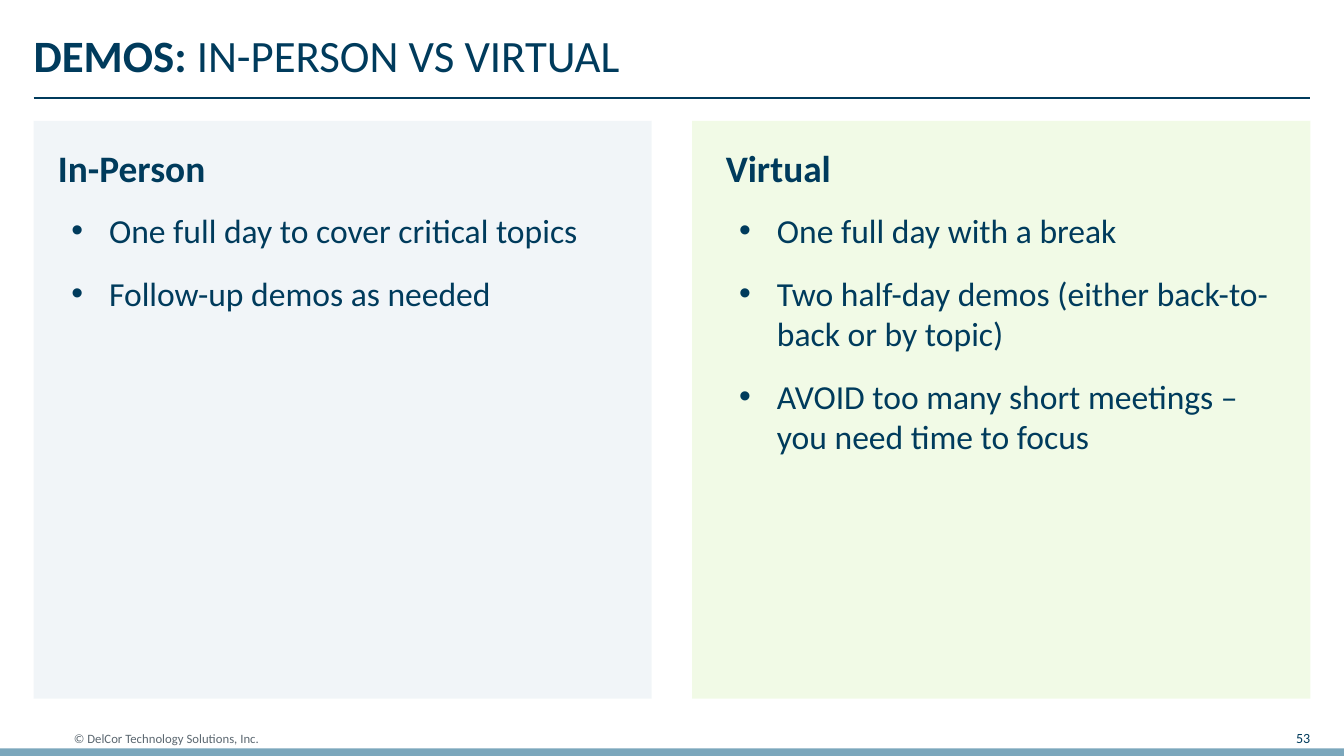
"""Build the slide comparing in-person and virtual demos."""
from lxml import etree
from pptx import Presentation
from pptx import util as u
from pptx.dml.color import RGBColor
from pptx.enum import shapes, text
from pptx.oxml.ns import qn

COLORS = {"navy": "003B5C", "gray": "5B6770", "strip": "7BA7BC",
          "in_person": "E5EDF2", "virtual": "E5F7CE"}
MARGIN, PANEL_TOP, PANEL_WIDTH, PANEL_HEIGHT = 18, 64.8, 331.2, 309.6
INDENT = 20.25


def write(holder, box, paragraphs, size, color="navy", bold=False, bullet=False,
          anchor=text.MSO_ANCHOR.TOP, **paragraph_format):
    for side, length in zip(("left", "top", "width", "height"), box):
        setattr(holder, side, u.Pt(length))
    frame = holder.text_frame
    frame_format = {"word_wrap": True, "auto_size": text.MSO_AUTO_SIZE.NONE,
                    "vertical_anchor": anchor, "margin_left": 0, "margin_top": 0,
                    "margin_right": 0, "margin_bottom": 0}
    for key, value in frame_format.items():
        setattr(frame, key, value)
    for number, words in enumerate(paragraphs):
        paragraph = frame.paragraphs[0] if number == 0 else frame.add_paragraph()
        properties = paragraph._p.get_or_add_pPr()
        if bullet:
            properties.set("marL", str(u.Pt(INDENT)))
            properties.set("indent", str(u.Pt(-INDENT)))
            etree.SubElement(properties, qn("a:buFont")).set("typeface", "Arial")
            etree.SubElement(properties, qn("a:buChar")).set("char", "•")
        settings = {"alignment": text.PP_ALIGN.LEFT, "space_before": u.Pt(0),
                    **paragraph_format}
        for key, value in settings.items():
            setattr(paragraph, key, value)
        run = paragraph.add_run()
        run.text = words
        for key, value in {"name": "Calibri", "size": u.Pt(size), "bold": bold}.items():
            setattr(run.font, key, value)
        run.font.color.rgb = RGBColor.from_string(COLORS[color])


def add_block(box, color):
    block = slide.shapes.add_shape(shapes.MSO_SHAPE.RECTANGLE, *map(u.Pt, box))
    block.shadow.inherit = False
    block.fill.solid()
    block.fill.fore_color.rgb = RGBColor.from_string(COLORS[color])
    block.line.fill.background()
    title.element.addprevious(block.element)
    return block


deck = Presentation()
deck.slide_width, deck.slide_height = u.Pt(720), u.Pt(405)
slide = deck.slides.add_slide(deck.slide_layouts.get_by_name("Comparison"))
title = slide.shapes.title

add_block((0, 401, 720, 4), "strip")
middle = text.MSO_ANCHOR.MIDDLE
copyright_line = slide.shapes.add_textbox(0, 0, 0, 0)
write(copyright_line, (39.6, 389.5, 138, 12), ["© DelCor Technology Solutions, Inc."],
      6.8, "gray", anchor=middle)
page_number = slide.shapes.add_textbox(0, 0, 0, 0)
write(page_number, (676, 389.5, 26, 12), ["53"], 7.5, anchor=middle,
      alignment=text.PP_ALIGN.RIGHT)

rule = slide.shapes.add_connector(shapes.MSO_CONNECTOR.STRAIGHT,
                                  *map(u.Pt, (MARGIN, 52.4, 720 - MARGIN, 52.4)))
rule.line.width = u.Pt(1)
rule.line.color.rgb = RGBColor.from_string(COLORS["navy"])
etree.SubElement(rule.element.spPr, qn("a:effectLst"))

write(title, (MARGIN, 18, 684, 34.5), ["DEMOS: "], 24, bold=True, line_spacing=0.9)
subject = title.text_frame.paragraphs[0].add_run()
subject.text = "IN-PERSON VS VIRTUAL"
for key, value in {"name": "Calibri", "size": u.Pt(24), "bold": False}.items():
    setattr(subject.font, key, value)
subject.font.color.rgb = RGBColor.from_string(COLORS["navy"])

formats = [
    ("In-Person", "in_person", MARGIN, 13, 291,
     ["One full day to cover critical topics", "Follow-up demos as needed"]),
    ("Virtual", "virtual", 720 - MARGIN - PANEL_WIDTH, 18, 286,
     ["One full day with a break",
      "Two half-day demos (either back-to-back or by topic)",
      "AVOID too many short meetings – you need time to focus"]),
]
for number, (heading, color, left, inset, list_width, points) in enumerate(formats):
    panel = add_block((left, PANEL_TOP, PANEL_WIDTH, PANEL_HEIGHT), color)
    tint = panel.element.spPr.find(".//" + qn("a:srgbClr"))
    etree.SubElement(tint, qn("a:alpha")).set("val", "50000")
    write(slide.placeholders[1 + 2 * number], (left + inset, 78, 125, 34.5),
          [heading], 20, bold=True)
    write(slide.placeholders[2 + 2 * number], (left + inset + 7.2, 112.5, list_width, 138),
          points, 18, bullet=True, space_after=u.Pt(12))

deck.save("out.pptx")
